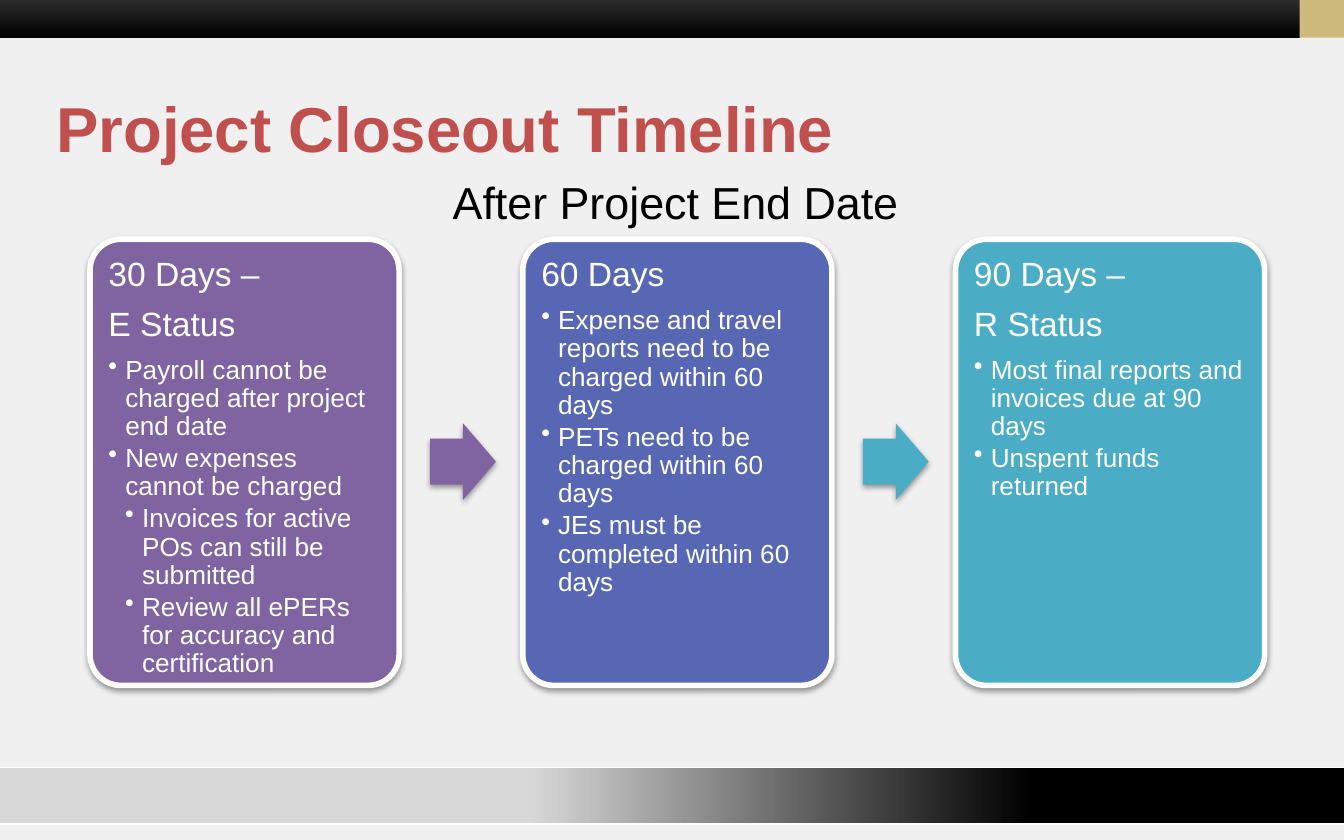
from lxml.etree import SubElement
from pptx import Presentation
from pptx.dml.color import RGBColor
from pptx.enum.shapes import MSO_SHAPE
from pptx.enum.text import MSO_ANCHOR, PP_ALIGN
from pptx.oxml.ns import qn
from pptx.util import Inches, Pt

HEX = {
    "back": "F0F0F0", "white": "FFFFFF", "black": "000000", "dark": "333333",
    "gold": "CFBA7D", "red": "C0504D", "plum": "8064A2", "blue": "5767B4",
    "teal": "4BACC6",
}

# Card colour, headings, then bullets as (level, text)
CARDS = [
    ("plum", ["30 Days –", "E Status"], [
        (1, "Payroll cannot be charged after project end date"),
        (1, "New expenses cannot be charged"),
        (2, "Invoices for active POs can still be submitted"),
        (2, "Review all ePERs for accuracy and certification")]),
    ("blue", ["60 Days"], [
        (1, "Expense and travel reports need to be charged within 60 days"),
        (1, "PETs need to be charged within 60 days"),
        (1, "JEs must be completed within 60 days")]),
    ("teal", ["90 Days –", "R Status"], [
        (1, "Most final reports and invoices due at 90 days"),
        (1, "Unspent funds returned")]),
]
ARROWS = ["plum", "teal"]
LEFT, STEP = 0.67, 3.22


def put(obj, values):
    for name, value in values.items():
        setattr(obj, name, value)


def tint(name):
    return RGBColor.from_string(HEX[name])


class Deck:
    def __init__(self, slide, face="Arial"):
        self.slide, self.face = slide, face

    def shape(self, kind, box, fill=None, line=None, width=0, adj=()):
        item = self.slide.shapes.add_shape(kind, *map(Inches, box))
        item.shadow.inherit = False
        for i, value in enumerate(adj):
            item.adjustments[i] = value
        if fill:
            item.fill.solid()
            item.fill.fore_color.rgb = tint(fill)
        if line:
            item.line.width = Pt(width)
            item.line.color.rgb = tint(line)
        else:
            item.line.fill.background()
        return item

    def fade(self, item, stops, angle):
        item.fill.gradient()
        item.fill.gradient_angle = angle
        for stop, (place, name) in zip(item.fill.gradient_stops, stops):
            stop.position = place
            stop.color.rgb = tint(name)

    def alpha(self, node, percent):
        SubElement(node, qn("a:alpha"), val=str(percent * 1000))

    def shade(self, item):
        effects = item._element.spPr.find(qn("a:effectLst"))
        outer = SubElement(effects, qn("a:outerShdw"), blurRad=str(Pt(3.1)),
                           dist=str(Pt(1.6)), dir="5400000", rotWithShape="0")
        self.alpha(SubElement(outer, qn("a:srgbClr"), val=HEX["black"]), 38)

    def frame(self, item, pads, wrap=True):
        sides = ("margin_left", "margin_top", "margin_right", "margin_bottom")
        put(item.text_frame, {"word_wrap": wrap,
                              "vertical_anchor": MSO_ANCHOR.TOP})
        put(item.text_frame, dict(zip(sides, map(Inches, pads))))
        return item.text_frame

    def words(self, para, text, size, color, bold=False):
        run = para.add_run()
        run.text = text
        put(run.font, {"name": self.face, "size": Pt(size), "bold": bold})
        run.font.color.rgb = tint(color)

    def label(self, box, text, size, color, pads, bold=False, wrap=True):
        item = self.slide.shapes.add_textbox(*map(Inches, box))
        frame = self.frame(item, pads, wrap)
        self.words(frame.paragraphs[0], text, size, color, bold)

    def bullet(self, para, level):
        para.level = level
        props = para._p.get_or_add_pPr()
        props.set("marL", str(Inches(0.125 * level)))
        props.set("indent", str(Inches(-0.125)))
        SubElement(props, qn("a:buChar"), char="•")

    def card(self, left, color, heads, items):
        item = self.shape(MSO_SHAPE.ROUNDED_RECTANGLE, (left, 1.78, 2.3, 3.32),
                          color, "white", 3, [0.1])
        self.shade(item)
        frame = self.frame(item, [0.07] * 4)
        rows = [(0, head) for head in heads] + items
        for i, (level, text) in enumerate(rows):
            para = frame.add_paragraph() if i else frame.paragraphs[0]
            put(para, {"alignment": PP_ALIGN.LEFT, "line_spacing": 0.9,
                       "space_after": Pt(2 if level else 7)})
            if level:
                self.bullet(para, level)
            self.words(para, text, 14 if level else 18, "white")

    def arrow(self, left, color):
        item = self.shape(MSO_SHAPE.RIGHT_ARROW, (left, 3.15, 0.49, 0.57),
                          color, adj=[0.6, 0.5])
        self.shade(item)


def main():
    show = Presentation()
    put(show, {"slide_width": Inches(10), "slide_height": Inches(6.25)})
    slide = show.slides.add_slide(show.slide_layouts[6])
    slide.background.fill.solid()
    slide.background.fill.fore_color.rgb = tint("back")
    deck = Deck(slide)

    # Footer and header bands
    foot = deck.shape(MSO_SHAPE.ROUNDED_RECTANGLE, (-0.17, 5.71, 10.33, 0.42),
                      line="white", width=0.75, adj=[0])
    deck.fade(foot, [(0.4, "black"), (0.76, "black")], 0)
    deck.alpha(next(foot._element.spPr.iter(qn("a:srgbClr"))), 10)
    head = deck.shape(MSO_SHAPE.RECTANGLE, (0, -0.04, 9.67, 0.32))
    deck.fade(head, [(0, "dark"), (1, "black")], 270)
    deck.shape(MSO_SHAPE.RECTANGLE, (9.67, -0.04, 0.33, 0.32), "gold")

    # Title and subtitle
    deck.label((0.42, 0.56, 8.75, 0.67), "Project Closeout Timeline", 34,
               "red", (0, 0.1, 0.1, 0.05), bold=True)
    deck.label((3.27, 1.25, 3.54, 0.5), "After Project End Date", 24,
               "black", (0.1, 0.05, 0.1, 0.05), wrap=False)

    # Timeline cards, with an arrow in each gap
    for i, (color, heads, items) in enumerate(CARDS):
        deck.card(LEFT + i * STEP, color, heads, items)
    for i, color in enumerate(ARROWS):
        deck.arrow(LEFT + 2.53 + i * STEP, color)

    show.save("out.pptx")


if __name__ == "__main__":
    main()
